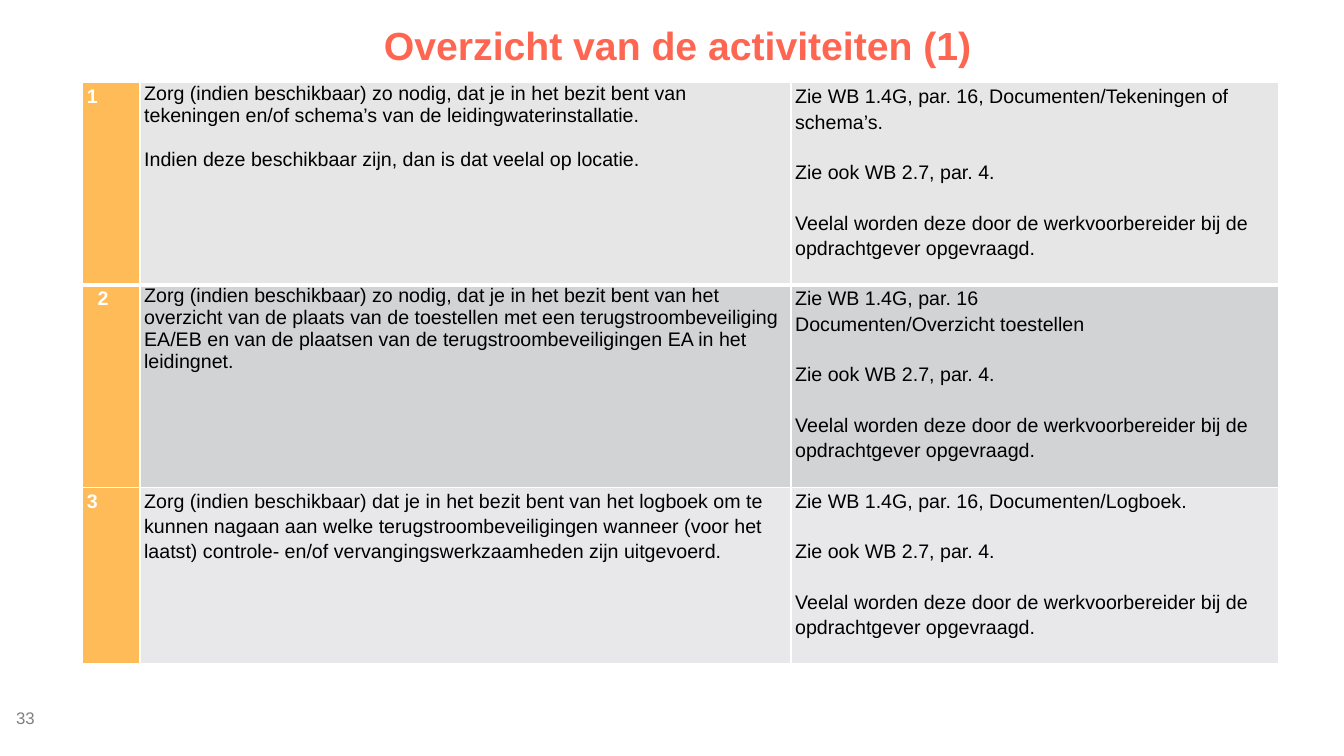
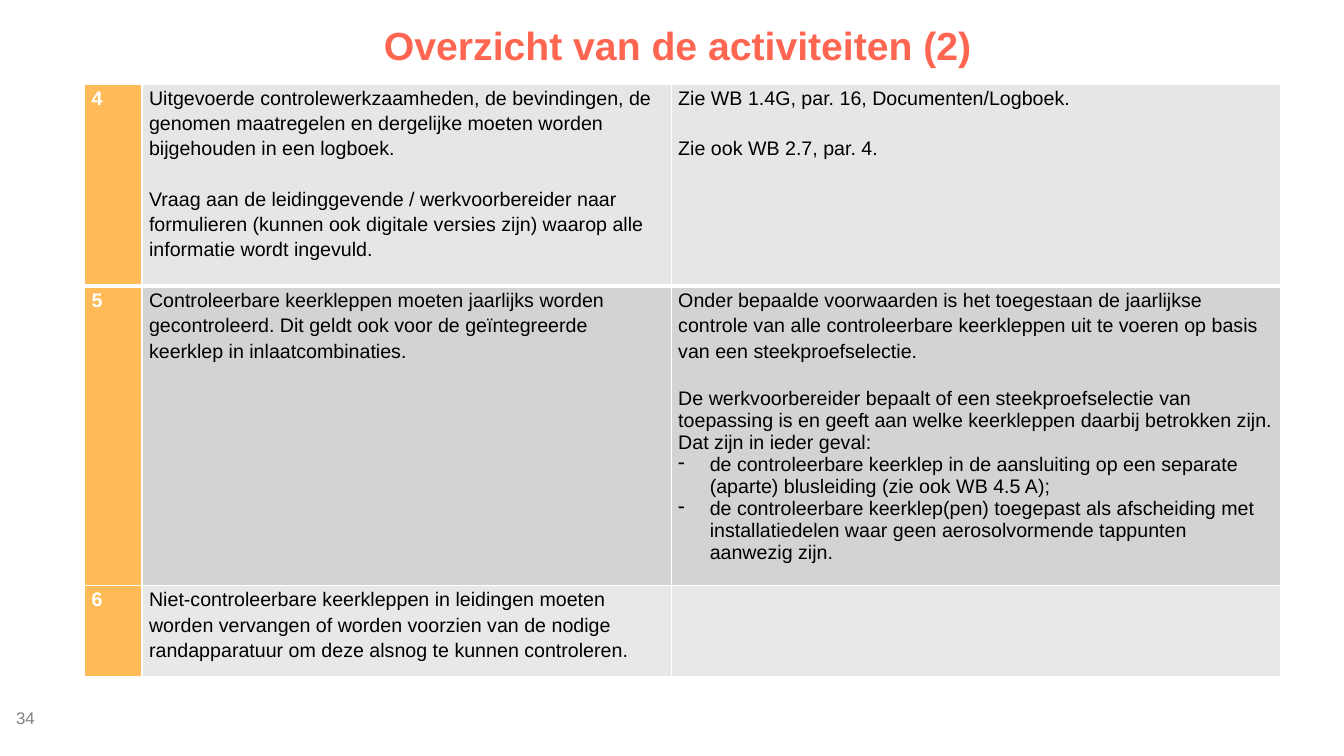
import pptx
import pptx.dml.color
import pptx.enum.text
import pptx.oxml.ns
import pptx.util
import lxml.etree
from dataclasses import dataclass

Pt = pptx.util.Pt
qn = pptx.oxml.ns.qn

COLORS = {
    "title": "FF6651",
    "number": "FFBB57",
    "rows": ["E6E6E6", "D1D3D4", "E8E8EA"],
    "text": "000000",
    "white": "FFFFFF",
    "page": "808080",
}
FONT = "Arial"
TITLE_BOX = (60, 14.5, 848, 39)
PAGE_BOX = (11.5, 498, 51, 29)
LOOSE = 1.15
LINE = 18


@dataclass
class Para:
    text: str
    spacing: float = LOOSE
    before: float = 0
    indent: float = 0
    bullet: bool = False


REQUEST = Para("Veelal worden deze door de werkvoorbereider bij de opdrachtgever opgevraagd.", before=LINE)
SEE_ALSO = Para("Zie ook WB 2.7, par. 4.", before=LINE)
LOGBOOK = Para("Zie WB 1.4G, par. 16, Documenten/Logboek.")

SLIDES = [
    {
        "title": "Overzicht van de activiteiten (1)",
        "page": "33",
        "box": (59, 59),
        "cols": [41, 465, 348.5],
        "heights": [144.5, 144.5, 126],
        "inset": 3,
        "rows": [
            [
                [Para("1")],
                [
                    Para("Zorg (indien beschikbaar) zo nodig, dat je in het bezit bent van tekeningen en/of schema’s van de leidingwaterinstallatie.", 1),
                    Para("Indien deze beschikbaar zijn, dan is dat veelal op locatie.", 1, 15.7),
                ],
                [Para("Zie WB 1.4G, par. 16, Documenten/Tekeningen of schema’s."), SEE_ALSO, REQUEST],
            ],
            [
                [Para("2", indent=7.8)],
                [Para("Zorg (indien beschikbaar) zo nodig, dat je in het bezit bent van het overzicht van de plaats van de toestellen met een terugstroombeveiliging EA/EB en van de plaatsen van de terugstroombeveiligingen EA in het leidingnet.", 1)],
                [Para("Zie WB 1.4G, par. 16"), Para("Documenten/Overzicht toestellen"), SEE_ALSO, REQUEST],
            ],
            [
                [Para("3")],
                [Para("Zorg (indien beschikbaar) dat je in het bezit bent van het logboek om te kunnen nagaan aan welke terugstroombeveiligingen wanneer (voor het laatst) controle- en/of vervangingswerkzaamheden zijn uitgevoerd.")],
                [LOGBOOK, SEE_ALSO, REQUEST],
            ],
        ],
    },
    {
        "title": "Overzicht van de activiteiten (2)",
        "page": "34",
        "box": (60.5, 60),
        "cols": [41, 378, 435],
        "heights": [144.5, 214, 64.5],
        "inset": 5,
        "rows": [
            [
                [Para("4")],
                [
                    Para("Uitgevoerde controlewerkzaamheden, de bevindingen, de genomen maatregelen en dergelijke moeten worden bijgehouden in een logboek."),
                    Para("Vraag aan de leidinggevende / werkvoorbereider naar formulieren (kunnen ook digitale versies zijn) waarop alle informatie wordt ingevuld.", before=LINE),
                ],
                [LOGBOOK, SEE_ALSO],
            ],
            [
                [Para("5")],
                [Para("Controleerbare keerkleppen moeten jaarlijks worden gecontroleerd. Dit geldt ook voor de geïntegreerde keerklep in inlaatcombinaties.")],
                [
                    Para("Onder bepaalde voorwaarden is het toegestaan de jaarlijkse controle van alle controleerbare keerkleppen uit te voeren op basis van een steekproefselectie."),
                    Para("De werkvoorbereider bepaalt of een steekproefselectie van toepassing is en geeft aan welke keerkleppen daarbij betrokken zijn. Dat zijn in ieder geval:", 1, LINE),
                    Para("de controleerbare keerklep in de aansluiting op een separate (aparte) blusleiding (zie ook WB 4.5 A);", 1, indent=22.5, bullet=True),
                    Para("de controleerbare keerklep(pen) toegepast als afscheiding met installatiedelen waar geen aerosolvormende tappunten aanwezig zijn.", 1, indent=22.5, bullet=True),
                ],
            ],
            [
                [Para("6")],
                [Para("Niet-controleerbare keerkleppen in leidingen moeten worden vervangen of worden voorzien van de nodige randapparatuur om deze alsnog te kunnen controleren.")],
                [],
            ],
        ],
    },
]


def rgb(value):
    return pptx.dml.color.RGBColor.from_string(value)


def add_run(p, text, size, color, bold=False):
    r = p.add_run()
    r.text = text
    r.font.name = FONT
    r.font.size = Pt(size)
    r.font.bold = bold
    r.font.color.rgb = rgb(color)


def place(sp, box):
    sp.left, sp.top, sp.width, sp.height = [Pt(v) for v in box]
    tf = sp.text_frame
    tf.margin_left = tf.margin_right = tf.margin_top = tf.margin_bottom = 0
    tf.vertical_anchor = pptx.enum.text.MSO_ANCHOR.MIDDLE
    tf.word_wrap = True
    return tf.paragraphs[0]


def add_title(slide, box, text):
    p = place(slide.shapes.title, box)
    p.alignment = pptx.enum.text.PP_ALIGN.CENTER
    p.line_spacing = 0.9
    add_run(p, text, 28, COLORS["title"], True)


def add_page_number(slide, box, text):
    sp = slide.shapes.add_textbox(*[Pt(v) for v in box])
    add_run(place(sp, box), text, 12, COLORS["page"])


def set_borders(cell, top, bottom):
    tcPr = cell._tc.get_or_add_tcPr()
    for side, width in (("L", 1), ("R", 1), ("T", top), ("B", bottom)):
        ln = lxml.etree.SubElement(tcPr, qn("a:ln" + side), w=str(Pt(width)))
        fill = lxml.etree.SubElement(ln, qn("a:solidFill"))
        lxml.etree.SubElement(fill, qn("a:srgbClr"), val=COLORS["white"])


def fill_cell(cell, paras, inset, color, bold):
    cell.margin_left = cell.margin_right = Pt(inset)
    cell.margin_top = cell.margin_bottom = 0
    tf = cell.text_frame
    for i, para in enumerate(paras):
        p = tf.add_paragraph() if i else tf.paragraphs[0]
        pPr = p._p.get_or_add_pPr()
        if para.indent:
            pPr.set("marL", str(Pt(para.indent)))
        if para.bullet:
            pPr.set("indent", str(-Pt(para.indent)))
            lxml.etree.SubElement(pPr, qn("a:buChar"), char="-")
        p.line_spacing = para.spacing
        if para.before:
            p.space_before = Pt(para.before)
        add_run(p, para.text, 14, color, bold)


def add_activities(slide, box, cols, heights, rows, inset):
    left, top = box
    frame = slide.shapes.add_table(
        len(rows), len(cols), Pt(left), Pt(top), Pt(sum(cols)), Pt(sum(heights)))
    table = frame.table
    table.first_row = table.horz_banding = False
    for column, width in zip(table.columns, cols):
        column.width = Pt(width)
    for i, (row, height) in enumerate(zip(rows, heights)):
        table.rows[i].height = Pt(height)
        for j, paras in enumerate(row):
            cell = table.cell(i, j)
            numbered = j == 0
            set_borders(cell, 3 if i == 1 else 1, 3 if i == 0 else 1)
            cell.fill.solid()
            cell.fill.fore_color.rgb = rgb(COLORS["number"] if numbered else COLORS["rows"][i])
            fill_cell(cell, paras, inset, COLORS["white" if numbered else "text"], numbered)


def add_slide(prs, data):
    slide = prs.slides.add_slide(prs.slide_layouts[5])
    add_page_number(slide, PAGE_BOX, data["page"])
    add_title(slide, TITLE_BOX, data["title"])
    add_activities(slide, data["box"], data["cols"], data["heights"], data["rows"], data["inset"])


def main():
    prs = pptx.Presentation()
    prs.slide_width, prs.slide_height = Pt(960), Pt(540)
    for data in SLIDES:
        add_slide(prs, data)
    prs.save("out.pptx")


if __name__ == "__main__":
    main()
